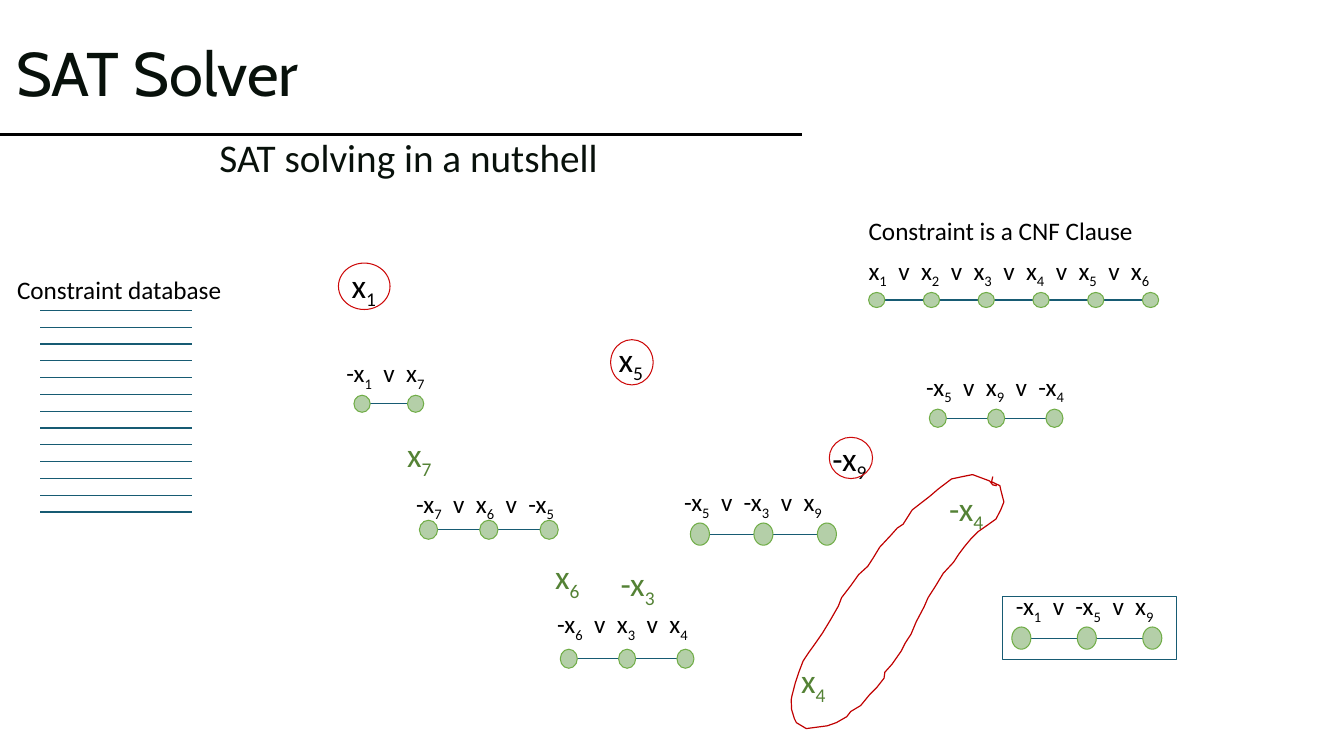
"""Build the slide that explains SAT solving in a nutshell."""
from pptx import Presentation
from pptx.dml.color import RGBColor
from pptx.enum.shapes import MSO_CONNECTOR, MSO_SHAPE
from pptx.enum.text import MSO_ANCHOR, MSO_AUTO_SIZE, PP_ALIGN
from pptx.oxml.ns import qn
from pptx.util import Cm, Pt
from lxml import etree

STRAIGHT = MSO_CONNECTOR.STRAIGHT
OVAL, RECTANGLE = MSO_SHAPE.OVAL, MSO_SHAPE.RECTANGLE
COLORS = {
    "black": "000000", "heading": "08110B", "line": "175B73",
    "node": "B4CFA8", "node_edge": "70AD47", "implied": "548235",
    "decision": "CD0909", "conflict": "C00000",
}

deck = Presentation()
deck.slide_width, deck.slide_height = Cm(33.87), Cm(19.05)
page = deck.slides.add_slide(deck.slide_layouts[5])


def add_line(x1, y1, x2, y2, color, width):
    """Draw a straight line without a shadow."""
    line = page.shapes.add_connector(STRAIGHT, Cm(x1), Cm(y1), Cm(x2), Cm(y2))
    line.line.color.rgb = RGBColor.from_string(COLORS[color])
    line.line.width = Pt(width)
    properties = line._element.find(qn("p:spPr"))
    etree.SubElement(properties, qn("a:effectLst"))


def add_text(pieces, left, top, width, height, size, color):
    """Place one line of text; pieces alternate between normal and subscript."""
    box = page.shapes.add_textbox(Cm(left), Cm(top), Cm(width), Cm(height))
    box.text_frame.word_wrap = False
    box.text_frame.auto_size = MSO_AUTO_SIZE.SHAPE_TO_FIT_TEXT
    para = box.text_frame.paragraphs[0]
    para.font.name, para.font.size = "Calibri", Pt(size)
    para.font.color.rgb = RGBColor.from_string(COLORS[color])
    for index, piece in enumerate(pieces):
        span = para.add_run()
        span.text = piece
        if index % 2:
            span._r.get_or_add_rPr().set("baseline", "-25000")
    return para


title = page.shapes.title
title.left, title.top, title.width, title.height = Cm(0.15), Cm(0.08), Cm(19.08), Cm(3.68)
title.text_frame.text = "SAT Solver"
title.text_frame.auto_size = MSO_AUTO_SIZE.NONE
title.text_frame.vertical_anchor = MSO_ANCHOR.MIDDLE
heading = title.text_frame.paragraphs[0]
heading.alignment = PP_ALIGN.LEFT
heading.line_spacing = 0.9
heading.font.name, heading.font.size = "Cabin", Pt(44)
heading.font.color.rgb = RGBColor.from_string(COLORS["heading"])
add_line(0, 3.38, 20.22, 3.38, "black", 2.25)

subtitle = add_text(["SAT solving in a nutshell"], 5.28, 3.38, 10.2, 1.3, 28, "heading")
subtitle.line_spacing = 0.9

add_text(["Constraint database"], 0.18, 6.78, 5.72, 1.02, 18, "black")
for row in range(13):
    y = 7.82 + row * 5.08 / 12
    add_line(1.02, y, 4.83, y, "line", 0.85)

add_text(["Constraint is a CNF Clause"], 21.64, 5.31, 7.24, 1.02, 18, "black")

# literals, node left, node top, node width, node height, step, text left, text top, text width
clauses = [
    ("x1 x2 x3 x4 x5 x6", 21.89, 7.37, 0.41, 0.38, 1.38, 21.64, 6.3, 7.8),
    ("-x1 x7", 8.92, 9.96, 0.41, 0.43, 1.35, 8.48, 8.89, 3),
    ("-x7 x6 -x5", 10.57, 13.11, 0.46, 0.48, 1.52, 10.24, 12.17, 4.14),
    ("-x5 -x3 x9", 17.4, 13.18, 0.48, 0.56, 1.6, 16.99, 12.14, 4.65),
    ("-x6 x3 x4", 14.12, 16.36, 0.43, 0.48, 1.47, 13.79, 15.21, 3.94),
    ("-x5 x9 -x4", 23.42, 10.31, 0.43, 0.46, 1.47, 23.09, 9.22, 4.7),
    ("-x1 -x5 x9", 25.5, 15.8, 0.48, 0.56, 1.65, 25.35, 14.76, 4.34),
]
for clause, left, top, width, height, step, text_left, text_top, text_width in clauses:
    literals = clause.split()
    middle = top + height / 2
    add_line(left, middle, left + step * (len(literals) - 1) + width, middle, "line", 0.85)
    pieces = []
    for index, literal in enumerate(literals):
        node = page.shapes.add_shape(
            OVAL, Cm(left + index * step), Cm(top), Cm(width), Cm(height))
        node.shadow.inherit = False
        node.fill.solid()
        node.fill.fore_color.rgb = RGBColor.from_string(COLORS["node"])
        node.line.color.rgb = RGBColor.from_string(COLORS["node_edge"])
        node.line.width = Pt(0.75)
        pieces += [("  v  " if index else "") + literal[:-1], literal[-1]]
    add_text(pieces, text_left, text_top, text_width, 1.02, 18, "black")

assignments = [
    ("x1", 8.61, 6.55, "black"), ("-x9", 20.73, 10.9, "black"),
    ("x7", 10.01, 10.82, "implied"), ("x5", 15.34, 8.41, "black"),
    ("x4", 19.94, 16.51, "implied"), ("x6", 13.74, 13.89, "implied"),
    ("-x3", 15.39, 14.07, "implied"), ("-x4", 23.67, 12.17, "implied"),
]
for literal, left, top, color in assignments:
    width = 1.63 if literal.startswith("-") else 1.37
    add_text([literal[:-1], literal[-1]], left, top, width, 1.27, 24, color)

outlines = [
    (OVAL, 8.53, 6.63, 1.3, 1.17, "decision"),
    (OVAL, 15.39, 8.56, 1.07, 1.14, "decision"),
    (OVAL, 20.9, 11.02, 1.09, 1.04, "decision"),
    (RECTANGLE, 25.27, 15.04, 4.37, 1.57, "line"),
]
for kind, left, top, width, height, color in outlines:
    outline = page.shapes.add_shape(kind, Cm(left), Cm(top), Cm(width), Cm(height))
    outline.shadow.inherit = False
    outline.fill.background()
    outline.line.color.rgb = RGBColor.from_string(COLORS[color])
    outline.line.width = Pt(0.75)

conflict_points = [
    (25.12, 12.24), (25.02, 12.22), (24.94, 12.12), (24.51, 11.96), (24.26, 12.01),
    (23.98, 12.07), (23.65, 12.32), (23.44, 12.5), (22.99, 12.85), (22.76, 13.21),
    (22.61, 13.31), (22.45, 13.49), (22.17, 13.79), (22, 14.07), (21.87, 14.27),
    (21.64, 14.48), (21.44, 14.76), (21.21, 15.06), (21.13, 15.27), (20.93, 15.62),
    (20.73, 15.95), (20.55, 16.21), (20.37, 16.46), (20.24, 16.66), (20.14, 16.92),
    (20.04, 17.22), (19.96, 17.53), (19.94, 17.63), (19.95, 17.88), (20.02, 18.11),
    (20.07, 18.21), (20.32, 18.36), (20.85, 18.29), (21.08, 18.21), (21.34, 18.06),
    (21.44, 17.93), (21.69, 17.78), (21.92, 17.5), (22.1, 17.32), (22.28, 17.09),
    (22.3, 16.94), (22.48, 16.74), (22.71, 16.41), (22.81, 16.21), (22.96, 15.98),
    (23.09, 15.67), (23.29, 15.29), (23.39, 15.06), (23.57, 14.78), (23.77, 14.45),
    (24.03, 14.17), (24.16, 13.97), (24.31, 13.77), (24.46, 13.59), (24.66, 13.39),
    (24.89, 13.23), (25.1, 13.08), (25.22, 12.85), (25.3, 12.65), (25.22, 12.34),
    (25.2, 12.24), (24.99, 12.14), (25.02, 12.01),
]
points = [(Cm(x), Cm(y)) for x, y in conflict_points]
builder = page.shapes.build_freeform(*points[0])
builder.add_line_segments(points[1:], close=False)
conflict = builder.convert_to_shape()
conflict.shadow.inherit = False
conflict.fill.background()
conflict.line.color.rgb = RGBColor.from_string(COLORS["conflict"])
conflict.line.width = Pt(0.85)

deck.save("out.pptx")
